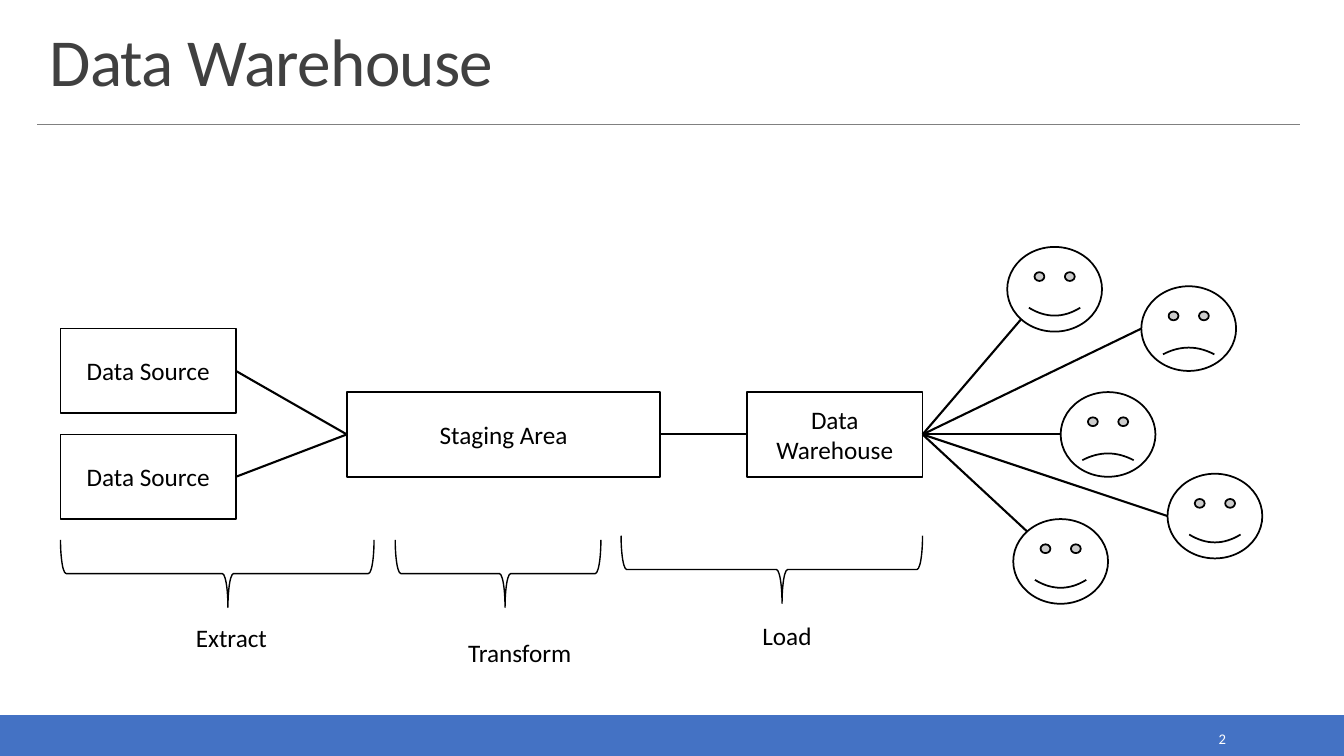
"""Builds the Data Warehouse slide: sources, staging, warehouse and users."""
from math import sqrt

from lxml import etree
from pptx import Presentation
from pptx.dml.color import RGBColor
from pptx.enum.shapes import MSO_CONNECTOR, MSO_SHAPE
from pptx.enum.text import MSO_ANCHOR, MSO_AUTO_SIZE, PP_ALIGN
from pptx.oxml.ns import qn
from pptx.util import Inches, Pt

BLACK = RGBColor(0x00, 0x00, 0x00)
WHITE = RGBColor(0xFF, 0xFF, 0xFF)
BLUE = RGBColor(0x44, 0x72, 0xC4)
GRAY = RGBColor(0x80, 0x80, 0x80)
DARK_GRAY = RGBColor(0x40, 0x40, 0x40)
RECTANGLE, BRACE, SMILEY = MSO_SHAPE.RECTANGLE, MSO_SHAPE.LEFT_BRACE, MSO_SHAPE.SMILEY_FACE
STRAIGHT = MSO_CONNECTOR.STRAIGHT
TOP, MIDDLE, BOTTOM = MSO_ANCHOR.TOP, MSO_ANCHOR.MIDDLE, MSO_ANCHOR.BOTTOM
LEFT, CENTER, RIGHT = PP_ALIGN.LEFT, PP_ALIGN.CENTER, PP_ALIGN.RIGHT
NO_AUTOFIT = MSO_AUTO_SIZE.NONE

BOX_W, BOX_H, FACE_W = 1.74, 0.84, 0.94
FLOW_TOP = 3.89
SMILE, FROWN = 0.047, -0.04
UPPER_LEFT, MID_LEFT, LOWER_LEFT = 1, 2, 3

prs = Presentation()
prs.slide_width, prs.slide_height = Inches(13.33), Inches(7.5)
slide = prs.slides.add_slide(prs.slide_layouts[5])
shapes = slide.shapes


def write(holder, text, size=18, color=BLACK, align=CENTER, anchor=MIDDLE):
    frame = holder.text_frame
    frame.word_wrap = True
    frame.auto_size = NO_AUTOFIT
    frame.vertical_anchor = anchor
    paragraph = frame.paragraphs[0]
    paragraph.alignment = align
    run = paragraph.add_run()
    run.text = text
    run.font.name, run.font.size, run.font.color.rgb = "Calibri", Pt(size), color
    return run


def outline(shape, fill=None, line=BLACK, width=1.25):
    shape.shadow.inherit = False
    if fill is None:
        shape.fill.background()
    else:
        shape.fill.solid()
        shape.fill.fore_color.rgb = fill
    shape.line.color.rgb, shape.line.width = line, Pt(width)


footer = shapes.add_shape(RECTANGLE, 0, Inches(7.1), prs.slide_width, Inches(0.4))
outline(footer, BLUE, BLUE)
page_number = shapes.add_textbox(Inches(10.83), Inches(7.19), Inches(1.43), Inches(0.28))
write(page_number, "2", 10.5, WHITE, RIGHT)

title = shapes.title
title.left, title.top, title.width, title.height = map(Inches, (0.39, 0.2, 12.52, 0.84))
heading = write(title, "Data Warehouse", 48, DARK_GRAY, LEFT, BOTTOM)
heading.font._element.set("spc", "-50")
title.text_frame.paragraphs[0].line_spacing = 0.85

boxes = []
for label, left, top, width in [
    ("Data Source", 0.6, 3.26, BOX_W),
    ("Data Source", 0.6, 4.31, BOX_W),
    ("Staging Area", 3.44, FLOW_TOP, 3.11),
    ("Data Warehouse", 7.41, FLOW_TOP, BOX_W),
]:
    box = shapes.add_shape(RECTANGLE, Inches(left), Inches(top), Inches(width), Inches(BOX_H))
    outline(box)
    write(box, label)
    boxes.append(box)
upper_source, lower_source, staging, warehouse = boxes

BRACE_DEPTH = 0.67
for step, left, span, middle, label_left, label_top in [
    ("Extract", 0.6, 3.11, 5.69, 1.47, 6.12),
    ("Transform", 3.92, 2.04, 5.69, 4.33, 6.27),
    ("Load", 6.16, 2.99, 5.65, 6.98, 6.1),
]:
    brace = shapes.add_shape(
        BRACE, Inches(left + (span - BRACE_DEPTH) / 2), Inches(middle - span / 2),
        Inches(BRACE_DEPTH), Inches(span))
    brace.rotation = 270
    brace.adjustments[0], brace.adjustments[1] = 0.083, 0.534
    outline(brace, width=1)
    caption = shapes.add_textbox(Inches(label_left), Inches(label_top), Inches(1.65), Inches(0.4))
    write(caption, step, anchor=TOP)

links = [(upper_source, staging, 1, 0.5), (lower_source, staging, 1, 0.5),
         (staging, warehouse, 1, 0.5)]
DIAGONAL = (1 - sqrt(0.5)) / 2
site_heights = {UPPER_LEFT: DIAGONAL, MID_LEFT: 0.5, LOWER_LEFT: 1 - DIAGONAL}
for left, top, mouth, site in [
    (9.99, 2.45, SMILE, LOWER_LEFT),
    (11.32, 2.84, FROWN, MID_LEFT),
    (10.52, FLOW_TOP, FROWN, MID_LEFT),
    (11.58, 4.7, SMILE, MID_LEFT),
    (10.05, 5.15, SMILE, UPPER_LEFT),
]:
    user = shapes.add_shape(SMILEY, Inches(left), Inches(top), Inches(FACE_W), Inches(BOX_H))
    user.adjustments[0] = mouth
    outline(user, WHITE)
    links.append((warehouse, user, site, site_heights[site]))

lines = []
for source, target, site, height in links:
    inset = 0 if height == 0.5 else DIAGONAL
    link = shapes.add_connector(STRAIGHT, 0, 0, 0, 0)
    link.begin_connect(source, 3)
    link.end_connect(target, site)
    link.end_x = target.left + int(target.width * inset)
    link.end_y = target.top + int(target.height * height)
    lines.append((link, BLACK, 1.5))

title_rule = shapes.add_connector(STRAIGHT, Inches(0.37), Inches(1.23), Inches(12.89), Inches(1.23))
lines.append((title_rule, GRAY, 0.5))
for line, color, width in lines:
    line.line.color.rgb, line.line.width = color, Pt(width)
    etree.SubElement(line._element.spPr, qn("a:effectLst"))

prs.save("out.pptx")
